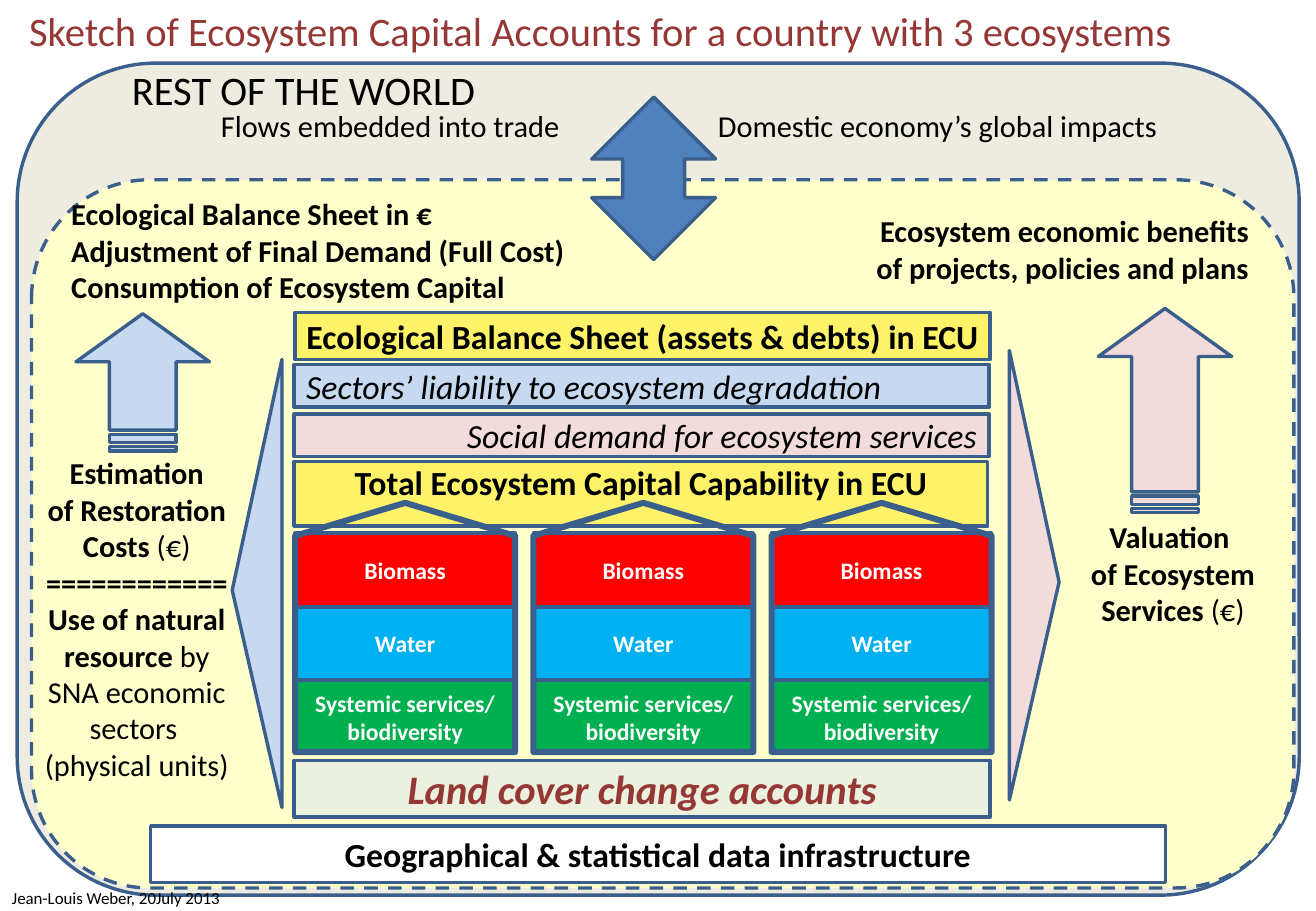
from pptx import Presentation
from pptx.dml.color import RGBColor
from pptx.enum.dml import MSO_LINE
from pptx.enum.shapes import MSO_SHAPE
from pptx.enum.text import MSO_ANCHOR, PP_ALIGN
from pptx.util import Cm, Pt

FONT = "Calibri"
BLACK, WHITE, MAROON = "000000", "FFFFFF", "953735"
OUTLINE = "3A5F8C"
YELLOW, PALE_BLUE, PALE_PINK = "FEF368", "C6D9F1", "F2DCDB"
LEFT, CENTER, RIGHT = PP_ALIGN.LEFT, PP_ALIGN.CENTER, PP_ALIGN.RIGHT


def color(hex_code):
    return RGBColor.from_string(hex_code)


def write(frame, text, size=18, ink=BLACK, bold=False, italic=False, align=LEFT):
    """Write paragraphs, one per line; a line may be a list of (words, bold) runs."""
    lines = [text] if isinstance(text, str) else text
    for index, line in enumerate(lines):
        paragraph = frame.add_paragraph() if index else frame.paragraphs[0]
        paragraph.alignment = align
        runs = [(line, bold)] if isinstance(line, str) else line
        for words, is_bold in runs:
            run = paragraph.add_run()
            run.text = words
            run.font.name = FONT
            run.font.size = Pt(size)
            run.font.bold = is_bold
            run.font.italic = italic
            run.font.color.rgb = color(ink)


class Sketch:
    def __init__(self, slide):
        self.slide = slide

    def shape(self, kind, box, fill=None, weight=2, rotation=0, adjust=()):
        shape = self.slide.shapes.add_shape(kind, *map(Cm, box))
        shape.shadow.inherit = False
        if fill:
            shape.fill.solid()
            shape.fill.fore_color.rgb = color(fill)
        else:
            shape.fill.background()
        shape.line.color.rgb = color(OUTLINE)
        shape.line.width = Pt(weight)
        shape.rotation = rotation
        for index, value in enumerate(adjust):
            shape.adjustments[index] = value
        return shape

    def bar(self, box, fill, text, insets=(0.25, 0.13, 0.25, 0.13), **style):
        frame = self.shape(MSO_SHAPE.RECTANGLE, box, fill).text_frame
        frame.word_wrap = True
        frame.vertical_anchor = MSO_ANCHOR.MIDDLE
        (frame.margin_left, frame.margin_top,
         frame.margin_right, frame.margin_bottom) = map(Cm, insets)
        write(frame, text, **style)

    def label(self, box, text, wrap=True, **style):
        frame = self.slide.shapes.add_textbox(*map(Cm, box)).text_frame
        frame.word_wrap = wrap
        write(frame, text, **style)

    def up_arrow(self, box, fill):
        self.shape(MSO_SHAPE.STRIPED_RIGHT_ARROW, box, fill, rotation=270,
                   adjust=(0.5, 0.36))


def main():
    deck = Presentation()
    deck.slide_width, deck.slide_height = Cm(27.51), Cm(19.05)
    sketch = Sketch(deck.slides.add_slide(deck.slide_layouts[6]))

    # World and country backgrounds
    sketch.shape(MSO_SHAPE.ROUNDED_RECTANGLE, (0.36, 1.32, 26.8, 17.4), "EEECE1")
    country = sketch.shape(MSO_SHAPE.ROUNDED_RECTANGLE,
                           (0.66, 3.76, 26.39, 14.81), "FFFFCC")
    country.line.dash_style = MSO_LINE.DASH

    # Base data layers
    sketch.bar((6.15, 15.9, 14.55, 1.19), "EBF1DE", "Land cover change accounts",
               size=24, ink=MAROON, bold=True, italic=True, align=CENTER)
    sketch.bar((3.15, 17.27, 21.21, 1.19), WHITE,
               "Geographical & statistical data infrastructure",
               size=20, bold=True, align=CENTER)

    # Accounts in ECU
    sketch.bar((6.17, 6.53, 14.53, 0.99), YELLOW,
               "Ecological Balance Sheet (assets & debts) in ECU",
               insets=(0.1, 0.13, 0.1, 0.13), size=20, bold=True, align=CENTER)
    sketch.bar((6.15, 7.62, 14.53, 0.89), PALE_BLUE,
               "Sectors’ liability to ecosystem degradation", size=20, italic=True)
    sketch.bar((6.15, 8.66, 14.53, 0.89), PALE_PINK,
               "Social demand for ecosystem services",
               size=20, italic=True, align=RIGHT)
    sketch.bar((6.15, 9.65, 14.5, 1.35), YELLOW,
               "Total Ecosystem Capital Capability in ECU",
               insets=(0.1, 0, 0.1, 0.5), size=20, bold=True, align=CENTER)

    # Three ecosystems, each a stack of accounts framed by a house outline
    layers = [("Biomass", "FF0000"), ("Water", "00B0F0"),
              ("Systemic services/ biodiversity", "00B050")]
    stack_width, house_height = 4.6, 5.21
    for ecosystem in range(3):
        left = 6.17 + 4.98 * ecosystem
        for level, (account, fill) in enumerate(layers):
            sketch.bar((left, 11.15 + 1.54 * level, stack_width, 1.53), fill,
                       account, size=14, ink=WHITE, bold=True, align=CENTER)
        house_left = left + (stack_width - house_height) / 2
        sketch.shape(MSO_SHAPE.PENTAGON,
                     (house_left, 10.82, house_height, stack_width),
                     weight=3.6, rotation=270, adjust=(0.15,))

    # Left side: restoration costs
    sketch.shape(MSO_SHAPE.ISOSCELES_TRIANGLE, (0.69, 11.68, 9.37, 1.04),
                 PALE_BLUE, rotation=270, adjust=(0.485,))
    sketch.up_arrow((1.55, 6.6, 2.87, 2.79), PALE_BLUE)
    sketch.label((1.24, 3.96, 10.92, 3.33),
                 ["Ecological Balance Sheet in €",
                  "Adjustment of Final Demand (Full Cost)",
                  "Consumption of Ecosystem Capital"], bold=True)
    sketch.label((0.56, 9.38, 4.6, 7.94),
                 ["Estimation",
                  [("of Restoration Costs ", True), ("(€)", False)],
                  "============",
                  [("Use of natural resource ", True),
                   ("by SNA economic sectors ", False)],
                  [("(physical units)", False)]], bold=True, align=CENTER)

    # Right side: valuation of services
    sketch.shape(MSO_SHAPE.ISOSCELES_TRIANGLE, (16.92, 11.51, 9.4, 1.04),
                 PALE_PINK, rotation=90, adjust=(0.515,))
    sketch.up_arrow((22.22, 7.19, 4.27, 2.79), PALE_PINK)
    sketch.label((17.75, 4.32, 8.61, 3.33),
                 "Ecosystem economic benefits of projects, policies and plans",
                 bold=True, align=RIGHT)
    sketch.label((22.22, 10.72, 4.6, 2.57),
                 ["Valuation ",
                  [("of Ecosystem Services ", True), ("(€)", False)]],
                 bold=True, align=CENTER)

    # Exchanges with the rest of the world
    sketch.shape(MSO_SHAPE.UP_DOWN_ARROW, (12.37, 2.03, 2.59, 3.4), "4F81BD")
    sketch.label((1.75, 1.24, 9.19, 1.27), "REST OF THE WORLD",
                 size=24, align=CENTER)
    sketch.label((4.37, 2.11, 7.8, 1.02), "Flows embedded into trade")
    sketch.label((14.76, 2.11, 10.39, 1.02), "Domestic economy’s global impacts")

    # Title and author
    sketch.label((0.36, 0, 27.15, 1.27),
                 "Sketch of Ecosystem Capital Accounts for a country with 3 ecosystems",
                 size=24, ink=MAROON)
    sketch.label((0, 18.44, 4.98, 0.69), "Jean-Louis Weber, 20July 2013",
                 wrap=False, size=10)

    deck.save("out.pptx")


if __name__ == "__main__":
    main()
